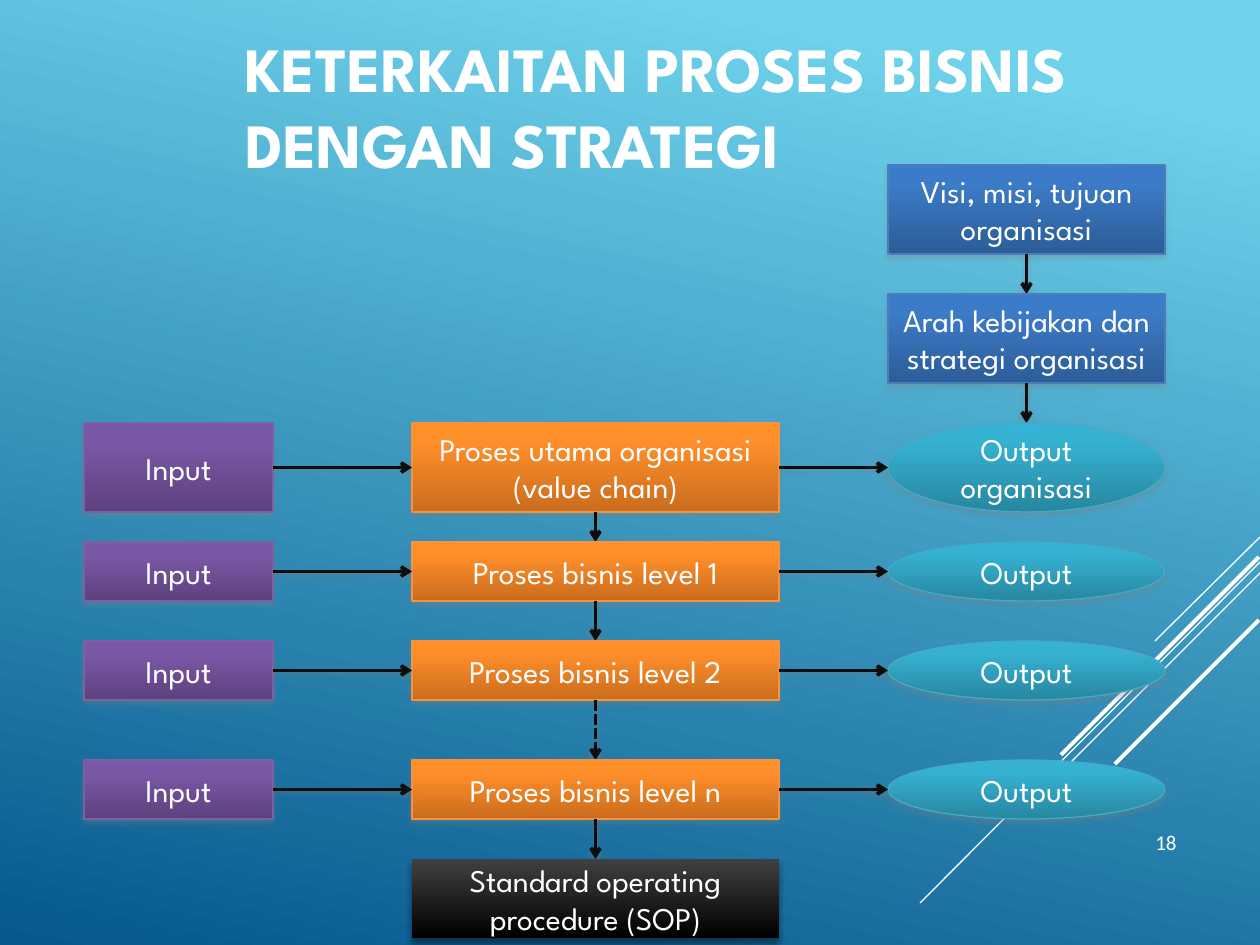
"""Builds the slide that links business processes with strategy."""
import lxml.etree
import pptx
import pptx.dml.color
import pptx.enum.dml
import pptx.enum.shapes
import pptx.enum.text
import pptx.oxml.ns
import pptx.util

PX_PER_INCH = 126
COLORS = {"white": "FFFFFF", "arrow": "0D0D0D", "shadow": "808080", "black": "000000"}
BACKGROUND = [(10, "6ED2EB"), (100, "06588E")]
FONT = "League Spartan"
TITLE = "KETERKAITAN PROSES BISNIS DENGAN STRATEGI"
PAGE_NUMBER = "18"

STYLES = {
    "strategy": {"shape": "RECTANGLE", "line": "4A7EBB",
                 "stops": [(0, "3A7CCB"), (20, "3C7BC7"), (100, "2C5D98")]},
    "input": {"shape": "RECTANGLE", "line": "7D60A0",
              "stops": [(0, "7B57A8"), (20, "7B58A6"), (100, "5D417E")]},
    "process": {"shape": "RECTANGLE", "line": "F69240",
                "stops": [(0, "FF8F26"), (20, "FF8F2A"), (100, "CB6C1D")]},
    "output": {"shape": "OVAL", "line": "46AAC5",
               "stops": [(0, "34B3D6"), (20, "36B1D2"), (100, "2787A0")]},
    "procedure": {"shape": "RECTANGLE", "line": None,
                  "stops": [(0, "404040"), (100, "000000")]},
}
SHADOWS = {"box": ("shadow", 35, 3.1, 1.8), "arrow": ("shadow", 38, 3.1, 1.6),
           "procedure": ("black", 46, 4, 3)}

COLUMNS = {"input": (84, 189), "process": (412, 367), "output": (888, 277)}
STRATEGY = [(165, ["Visi, misi, tujuan organisasi"]),
            (294, ["Arah kebijakan dan strategi organisasi"])]
TALL = 89
ROWS = [
    (423, TALL, ["Proses utama organisasi", "(value chain)"], "Output organisasi"),
    (542, 59, ["Proses bisnis level 1"], "Output"),
    (641, 59, ["Proses bisnis level 2"], "Output"),
    (760, 59, ["Proses bisnis level n"], "Output"),
]
PROCEDURE = (859, 79, ["Standard operating procedure (SOP)"])
DASHED_AFTER_ROW = 2
STRIPES = [
    ((1260, 537), (1155, 641), 0.75),
    ((1260, 562), (920, 903), 0.75),
    ((1260, 573), (1043, 790), 0.75),
    ((1259, 557), (1061, 755), 2.25),
    ((1259, 620), (1115, 764), 2.25),
]


def px(value):
    return pptx.util.Emu(round(value * 914400 / PX_PER_INCH))


def rgb(color):
    return pptx.dml.color.RGBColor.from_string(color)


def add_node(parent, tag, **attributes):
    values = {name: str(value) for name, value in attributes.items()}
    return lxml.etree.SubElement(parent, pptx.oxml.ns.qn(tag), values)


def paint_gradient(fill, element, stops, angle):
    fill.gradient()
    fill.gradient_angle = 360 - angle
    stop_list = next(element.iter(pptx.oxml.ns.qn("a:gsLst")))
    for old_stop in list(stop_list):
        stop_list.remove(old_stop)
    for position, color in stops:
        stop = add_node(stop_list, "a:gs", pos=position * 1000)
        add_node(stop, "a:srgbClr", val=color)


def add_shadow(effects, color, opacity, blur, distance):
    shadow = add_node(effects, "a:outerShdw", blurRad=pptx.util.Pt(blur),
                      dist=pptx.util.Pt(distance), dir=90 * 60000, rotWithShape=0)
    tint = add_node(shadow, "a:srgbClr", val=COLORS[color])
    add_node(tint, "a:alpha", val=opacity * 1000)


def write(frame, lines, size, align, anchor, font=FONT, bold=False):
    frame.word_wrap = True
    frame.vertical_anchor = anchor
    for index, line in enumerate(lines):
        para = frame.add_paragraph() if index else frame.paragraphs[0]
        para.alignment = align
        span = para.add_run()
        span.text = line
        span.font.size = pptx.util.Pt(size)
        span.font.name = font
        span.font.bold = bold
        span.font.color.rgb = rgb(COLORS["white"])


def add_text(page, place, *text, **options):
    box = page.shapes.add_textbox(*map(px, place))
    write(box.text_frame, *text, **options)


def add_box(page, kind, column, top, height, lines):
    style = STYLES[kind]
    left, width = COLUMNS[column]
    preset = getattr(pptx.enum.shapes.MSO_SHAPE, style["shape"])
    box = page.shapes.add_shape(preset, *map(px, (left, top, width, height)))
    paint_gradient(box.fill, box.element, style["stops"], 90)
    if style["line"]:
        box.line.color.rgb = rgb(style["line"])
        box.line.width = pptx.util.Pt(0.75)
    else:
        box.line.fill.background()
    box.shadow.inherit = False
    effects = box.element.spPr.find(pptx.oxml.ns.qn("a:effectLst"))
    add_shadow(effects, *SHADOWS.get(kind, SHADOWS["box"]))
    write(box.text_frame, lines, 18, pptx.enum.text.PP_ALIGN.CENTER,
          pptx.enum.text.MSO_ANCHOR.MIDDLE)


def add_line(page, start, end, color, width):
    line = page.shapes.add_connector(pptx.enum.shapes.MSO_CONNECTOR.STRAIGHT,
                                     *map(px, (*start, *end)))
    line.line.color.rgb = rgb(COLORS[color])
    line.line.width = pptx.util.Pt(width)
    return line, add_node(line.element.spPr, "a:effectLst")


def add_arrow(page, start, end, dashed=False):
    arrow, effects = add_line(page, start, end, "arrow", 2)
    if dashed:
        arrow.line.dash_style = pptx.enum.dml.MSO_LINE.SQUARE_DOT
    outline = arrow.element.spPr.find(pptx.oxml.ns.qn("a:ln"))
    add_node(outline, "a:tailEnd", type="arrow")
    add_shadow(effects, *SHADOWS["arrow"])


def add_down_arrow(page, column, top, bottom, dashed=False):
    left, width = COLUMNS[column]
    center = left + width / 2
    add_arrow(page, (center, top), (center, bottom), dashed)


def add_strategy(page):
    next_tops = [STRATEGY[1][0], ROWS[0][0]]
    for (top, lines), next_top in zip(STRATEGY, next_tops):
        add_box(page, "strategy", "output", top, TALL, lines)
        add_down_arrow(page, "output", top + TALL, next_top)


def add_processes(page):
    next_tops = [row[0] for row in ROWS[1:]] + [PROCEDURE[0]]
    for index, (top, height, process, output) in enumerate(ROWS):
        texts = {"input": ["Input"], "process": process, "output": [output]}
        for kind, lines in texts.items():
            add_box(page, kind, kind, top, height, lines)
        middle = top + height / 2
        for source, target in (("input", "process"), ("process", "output")):
            add_arrow(page, (sum(COLUMNS[source]), middle), (COLUMNS[target][0], middle))
        add_down_arrow(page, "process", top + height, next_tops[index],
                       index == DASHED_AFTER_ROW)
    add_box(page, "procedure", "process", *PROCEDURE)


def main():
    deck = pptx.Presentation()
    deck.slide_width, deck.slide_height = px(1260), px(945)
    page = deck.slides.add_slide(deck.slide_layouts[6])
    paint_gradient(page.background.fill, page.element, BACKGROUND, 102)
    for start, end, width in STRIPES:
        add_line(page, start, end, "white", width)
    add_text(page, (233, 26, 1017, 158), [TITLE], 36, pptx.enum.text.PP_ALIGN.LEFT,
             pptx.enum.text.MSO_ANCHOR.MIDDLE, bold=True)
    add_strategy(page)
    add_processes(page)
    add_text(page, (1071, 769, 118, 92), [PAGE_NUMBER], 12, pptx.enum.text.PP_ALIGN.RIGHT,
             pptx.enum.text.MSO_ANCHOR.BOTTOM, font="Calibri")
    deck.save("out.pptx")


if __name__ == "__main__":
    main()
